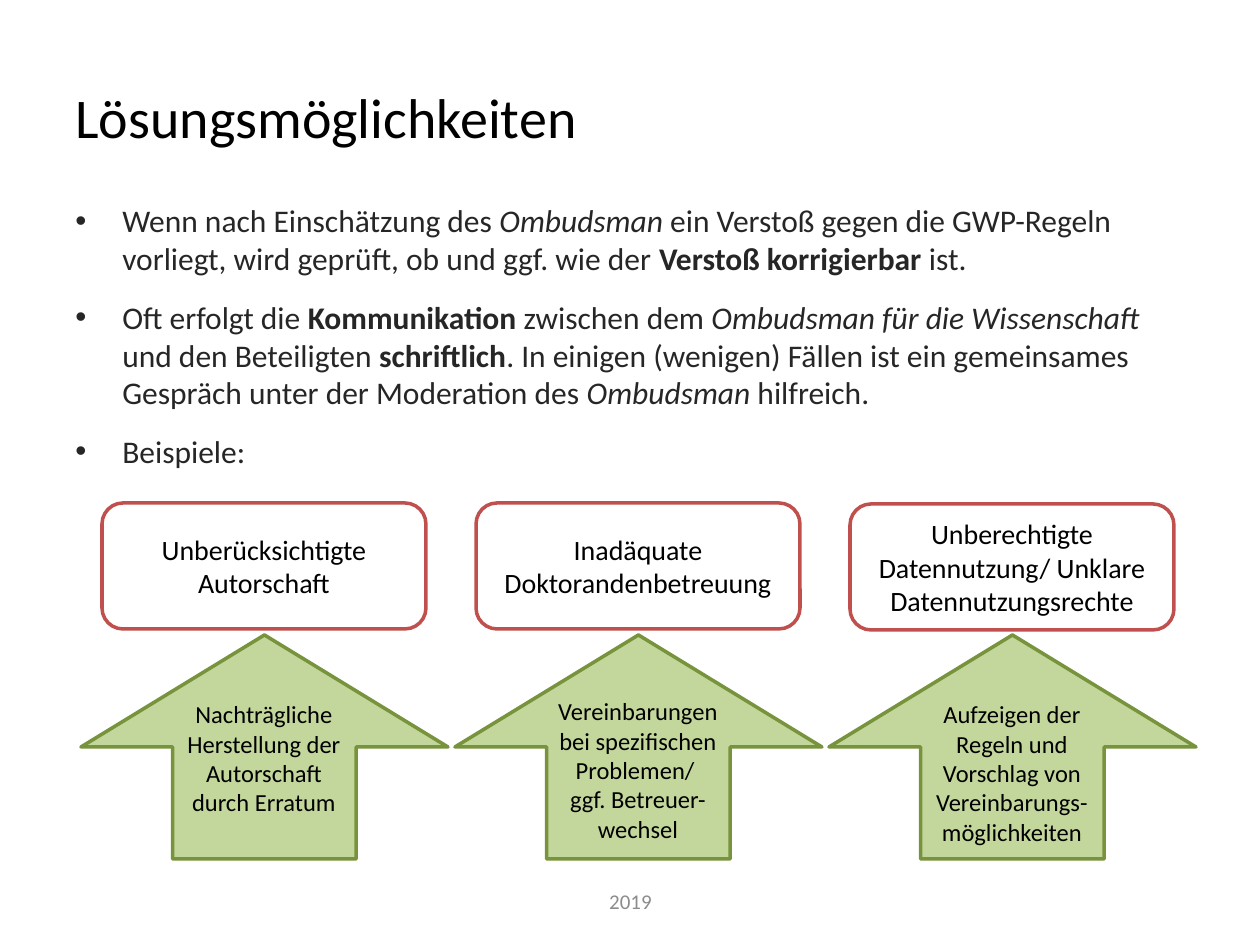
from lxml import etree
from pptx import Presentation
from pptx.dml.color import RGBColor
from pptx.enum.shapes import MSO_SHAPE
from pptx.enum.text import MSO_ANCHOR, PP_ALIGN
from pptx.oxml.ns import qn
from pptx.util import Emu, Pt

ROUNDED, UP_ARROW = MSO_SHAPE.ROUNDED_RECTANGLE, MSO_SHAPE.UP_ARROW
TOP, MIDDLE = MSO_ANCHOR.TOP, MSO_ANCHOR.MIDDLE
LEFT, CENTER = PP_ALIGN.LEFT, PP_ALIGN.CENTER
FONT = "Calibri"
BLACK, DARK, GREY = "000000", "262626", "8C8C8C"
RED, GREEN, LIGHT_GREEN = "C0504D", "77933C", "C3D69B"

# Content: runs are (text, style), style "b" bold, "i" italic
TITLE = "Lösungsmöglichkeiten"
YEAR = "2019"
BULLETS = [
    [("Wenn nach Einschätzung des ", ""), ("Ombudsman", "i"),
     (" ein Verstoß gegen die GWP-Regeln vorliegt, wird geprüft, ob und ggf. wie der ", ""),
     ("Verstoß korrigierbar", "b"), (" ist.", "")],
    [("Oft erfolgt die ", ""), ("Kommunikation", "b"), (" zwischen dem ", ""),
     ("Ombudsman für die Wissenschaft ", "i"), ("und den Beteiligten ", ""),
     ("schriftlich", "b"),
     (". In einigen (wenigen) Fällen ist ein gemeinsames Gespräch unter der Moderation des ", ""),
     ("Ombudsman", "i"), (" hilfreich.", "")],
    [("Beispiele:", "")],
]
# Problem, its top, solution paragraphs, their top
EXAMPLES = [
    ("Unberücksichtigte Autorschaft", 503,
     ["Nachträgliche Herstellung der Autorschaft durch Erratum"], 693),
    ("Inadäquate Doktorandenbetreuung", 503,
     ["Vereinbarungen bei spezifischen Problemen/ ", "ggf. Betreuer-wechsel"], 690),
    ("Unberechtigte Datennutzung/ Unklare Datennutzungsrechte", 504,
     ["Aufzeigen der Regeln und Vorschlag von Vereinbarungs-möglichkeiten"], 693),
]
FIRST_CENTER, PITCH = 264, 374


def px(n):
    return Emu(round(n * 914400 / 126))


def rgb(color):
    return RGBColor.from_string(color)


def write(s, paragraphs, size, color, align=LEFT, anchor=TOP):
    tf = s.text_frame
    tf.word_wrap = True
    tf.vertical_anchor = anchor
    for i, runs in enumerate(paragraphs):
        p = tf.paragraphs[0] if i == 0 else tf.add_paragraph()
        p.alignment = align
        for text, style in runs:
            r = p.add_run()
            r.text = text
            r.font.name, r.font.size = FONT, Pt(size)
            r.font.color.rgb = rgb(color)
            r.font.bold, r.font.italic = style == "b", style == "i"
    return tf


def add_text(box, *args):
    return write(slide.shapes.add_textbox(*map(px, box)), *args)


def add_outlined(kind, box, line, fill=None):
    s = slide.shapes.add_shape(kind, *map(px, box))
    s.shadow.inherit = False
    if fill:
        s.fill.solid()
        s.fill.fore_color.rgb = rgb(fill)
    else:
        s.fill.background()
    s.line.color.rgb = rgb(line)
    s.line.width = Pt(2)
    return s


def add_bullet(p):
    p.space_after = Pt(12)
    pPr = p._p.get_or_add_pPr()
    pPr.set("marL", str(px(47)))
    pPr.set("indent", str(-px(47)))
    etree.SubElement(pPr, qn("a:buFont")).set("typeface", "Arial")
    etree.SubElement(pPr, qn("a:buChar")).set("char", "•")


prs = Presentation()
prs.slide_width, prs.slide_height = px(1260), px(945)
slide = prs.slides.add_slide(prs.slide_layouts[6])

# Title, bullets and footer
add_text((63, 38, 840, 157), [[(TITLE, "")]], 32, BLACK, LEFT, MIDDLE)
body = add_text((63, 195, 1134, 624), BULLETS, 18, DARK)
for p in body.paragraphs:
    add_bullet(p)
add_text((431, 876, 399, 50), [[(YEAR, "")]], 12, GREY, CENTER, MIDDLE)

# Problem boxes, each with a solution arrow below
for i, (problem, box_top, solution, text_top) in enumerate(EXAMPLES):
    center = FIRST_CENTER + i * PITCH
    s = add_outlined(ROUNDED, (center - 162, box_top, 324, 126), RED)
    write(s, [[(problem, "")]], 16, BLACK, CENTER, MIDDLE)
    add_outlined(UP_ARROW, (center - 183, 635, 367, 224), GREEN, LIGHT_GREEN)
    add_text((center - 95, text_top, 190, 161),
             [[(line, "")] for line in solution], 14, BLACK, CENTER)

prs.save("out.pptx")
